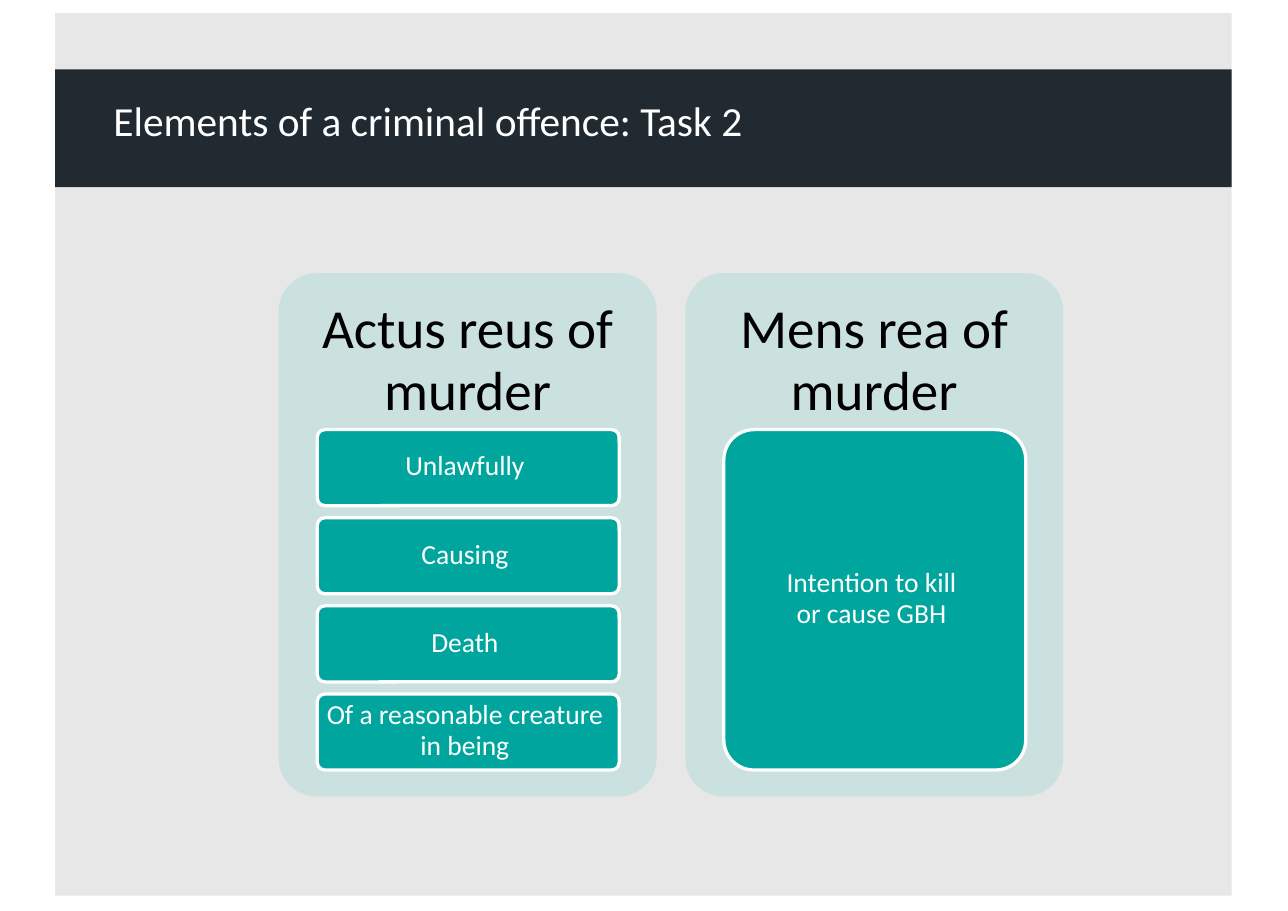
from pptx import Presentation
from pptx.dml.color import RGBColor
from pptx.enum.shapes import MSO_SHAPE
from pptx.enum.text import MSO_ANCHOR, MSO_AUTO_SIZE, PP_ALIGN
from pptx.oxml.ns import qn
from pptx.util import Inches, Pt
from lxml.etree import SubElement

COLOURS = {
    "backdrop": "171D23",
    "band": "202A30",
    "panel": "CBE1DF",
    "card": "00A69E",
    "white": "FFFFFF",
    "black": "000000",
}
PANELS = [
    ("Actus reus of murder", 0.05,
     ["Unlawfully", "Causing", "Death", "Of a reasonable creature in being"]),
    ("Mens rea of murder", 0.4, ["Intention to kill or cause GBH"]),
]
PANEL_LEFT, PANEL_TOP, PANEL_WIDTH, PANEL_HEIGHT = 2.53, 2.48, 3.43, 4.75
PANEL_STEP = 3.69
CARD_INDENT, CARD_TOP, CARD_WIDTH = 0.35, 3.9, 2.74
CARDS_HEIGHT, CARD_GAP = 3.09, 0.11


def colour(name):
    return RGBColor.from_string(COLOURS[name])


def write(shape, text, *, size, ink="white", align=PP_ALIGN.CENTER,
          anchor=MSO_ANCHOR.MIDDLE, insets=(0, 0, 0, 0), leading=None):
    frame = shape.text_frame
    frame.word_wrap = True
    frame.auto_size = MSO_AUTO_SIZE.NONE
    frame.vertical_anchor = anchor
    (frame.margin_left, frame.margin_top,
     frame.margin_right, frame.margin_bottom) = map(Inches, insets)
    para = frame.paragraphs[0]
    para.alignment = align
    if leading:
        para.line_spacing = Pt(leading)
    span = para.add_run()
    span.text = text
    span.font.name = "Calibri"
    span.font.size = Pt(size)
    span.font.color.rgb = colour(ink)


class OffenceSlide:
    """Holds the current slide and draws its elements in one style."""

    def __init__(self, deck):
        self.page = deck.slides.add_slide(deck.slide_layouts[5])

    def block(self, kind, area, fill, outline=None, opacity=None):
        box = self.page.shapes.add_shape(kind, *map(Inches, area))
        box.shadow.inherit = False
        box.fill.solid()
        box.fill.fore_color.rgb = colour(fill)
        if opacity:
            paint = next(box.element.iter(qn("a:srgbClr")))
            SubElement(paint, qn("a:alpha"), val=str(opacity * 1000))
        if outline:
            box.line.color.rgb = colour(outline)
            box.line.width = Pt(2.14)
        else:
            box.line.fill.background()
        return box

    def rounded(self, area, fill, outline=None):
        box = self.block(MSO_SHAPE.ROUNDED_RECTANGLE, area, fill, outline)
        box.adjustments[0] = 0.1
        return box

    def title(self, text, area):
        self.block(MSO_SHAPE.RECTANGLE, area, "band")
        title = self.page.shapes.title
        title.left, title.top, title.width, title.height = map(Inches, area)
        title.element.getparent().append(title.element)
        write(title, text, size=27, align=PP_ALIGN.LEFT,
              anchor=MSO_ANCHOR.TOP, insets=(0.53, 0.23, 0, 0))

    def panel(self, left, heading, side, elements):
        box = self.rounded((left, PANEL_TOP, PANEL_WIDTH, PANEL_HEIGHT), "panel")
        write(box, heading, size=36, ink="black", anchor=MSO_ANCHOR.TOP,
              insets=(0.2, 0.13, 0.2, 0), leading=40.1)
        step = (CARDS_HEIGHT + CARD_GAP) / len(elements)
        for row, element in enumerate(elements):
            card = self.rounded((left + CARD_INDENT, CARD_TOP + row * step,
                                 CARD_WIDTH, step - CARD_GAP), "card", "white")
            write(card, element, size=18, leading=20.2,
                  insets=(side, 0, side + 0.06, 0.03))


def main():
    deck = Presentation()
    deck.slide_width, deck.slide_height = Inches(11.69), Inches(8.27)
    slide = OffenceSlide(deck)
    slide.block(MSO_SHAPE.RECTANGLE, (0.5, 0.12, 10.68, 8.01), "backdrop", opacity=10)
    slide.title("Elements of a criminal offence: Task 2", (0.5, 0.63, 10.68, 1.07))
    for column, (heading, side, elements) in enumerate(PANELS):
        slide.panel(PANEL_LEFT + column * PANEL_STEP, heading, side, elements)
    deck.save("out.pptx")


if __name__ == "__main__":
    main()
